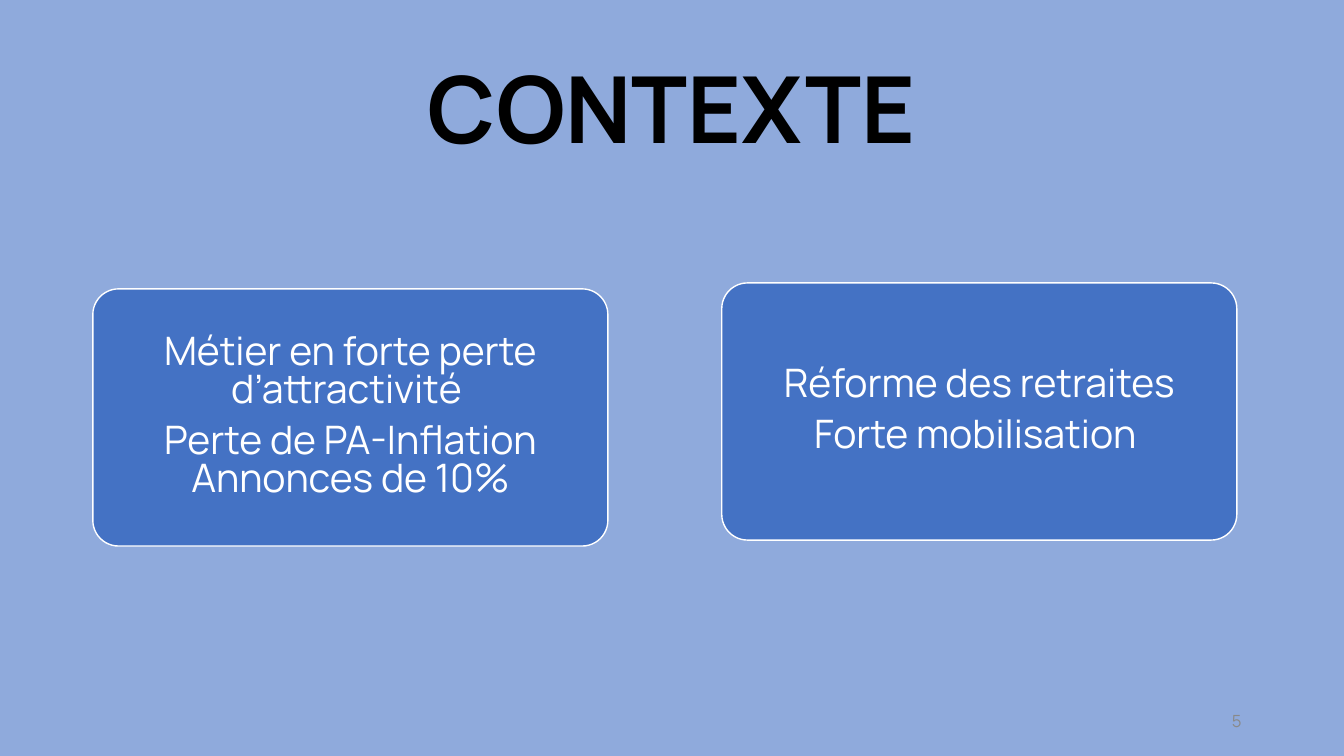
from pptx import Presentation
from pptx.dml.color import RGBColor
from pptx.enum.shapes import MSO_SHAPE as Shape
from pptx.enum.text import MSO_ANCHOR as Anchor, MSO_AUTO_SIZE as AutoSize, PP_ALIGN as Align
from pptx.util import Cm, Pt

SKY = RGBColor(0x8F, 0xAA, 0xDC)
BLUE = RGBColor(0x44, 0x72, 0xC4)
WHITE = RGBColor(0xFF, 0xFF, 0xFF)
BLACK = RGBColor(0x00, 0x00, 0x00)
GREY = RGBColor(0x89, 0x89, 0x89)
FONT_NAME = "Manrope"

CARD_WIDTH, CARD_HEIGHT = Cm(12.98), Cm(6.48)
CARDS = [
    (Cm(2.34), Cm(7.28), ["Métier en forte perte d’attractivité ",
                          "Perte de PA-Inflation Annonces de 10%"]),
    (Cm(18.19), Cm(7.13), ["Réforme des retraites", "Forte mobilisation "]),
]
CARD_FRAME = {"margin_left": Cm(0.15), "margin_right": Cm(0.15),
              "margin_top": Cm(0.1), "margin_bottom": Cm(0.1)}
CARD_PARA = {"line_spacing": 0.8, "space_after": Pt(9.8)}


def apply_format(target, values):
    """Set each named attribute of the target."""
    for name, value in values.items():
        setattr(target, name, value)


def write_text(shape, lines, size, color, align=Align.CENTER, bold=False,
               frame_format=None, para_format=None):
    """Fill a shape with vertically centred paragraphs."""
    frame = shape.text_frame
    frame.text = "\n".join(lines)
    apply_format(frame, {"word_wrap": True, "auto_size": AutoSize.NONE,
                         "vertical_anchor": Anchor.MIDDLE, **(frame_format or {})})
    for para in frame.paragraphs:
        apply_format(para, {"alignment": align, **(para_format or {})})
        for span in para.runs:
            apply_format(span.font, {"name": FONT_NAME, "size": Pt(size), "bold": bold})
            span.font.color.rgb = color


def add_title(page, text):
    """Place and format the title placeholder."""
    title = page.shapes.title
    apply_format(title, {"left": Cm(2.33), "top": Cm(1.01),
                         "width": Cm(29.21), "height": Cm(3.68)})
    write_text(title, [text], 66, BLACK, bold=True, para_format={"line_spacing": 0.9})


def add_card(page, left, top, lines):
    """Add a rounded blue card with centred text."""
    card = page.shapes.add_shape(Shape.ROUNDED_RECTANGLE, left, top, CARD_WIDTH, CARD_HEIGHT)
    card.adjustments[0] = 0.1
    card.shadow.inherit = False
    card.fill.solid()
    card.fill.fore_color.rgb = BLUE
    card.line.color.rgb = WHITE
    card.line.width = Pt(1)
    write_text(card, lines, 28, WHITE, frame_format=CARD_FRAME, para_format=CARD_PARA)


def add_page_number(page, number):
    """Add the page number at the lower right."""
    box = page.shapes.add_textbox(Cm(23.92), Cm(17.66), Cm(7.62), Cm(1.01))
    write_text(box, [number], 12, GREY, align=Align.RIGHT)


def main():
    """Build the context slide and save it."""
    deck = Presentation()
    apply_format(deck, {"slide_width": Cm(33.87), "slide_height": Cm(19.05)})
    page = deck.slides.add_slide(deck.slide_layouts.get_by_name("Title Only"))
    page.background.fill.solid()
    page.background.fill.fore_color.rgb = SKY
    add_title(page, "CONTEXTE")
    for left, top, lines in CARDS:
        add_card(page, left, top, lines)
    add_page_number(page, "5")
    deck.save("out.pptx")


if __name__ == "__main__":
    main()
